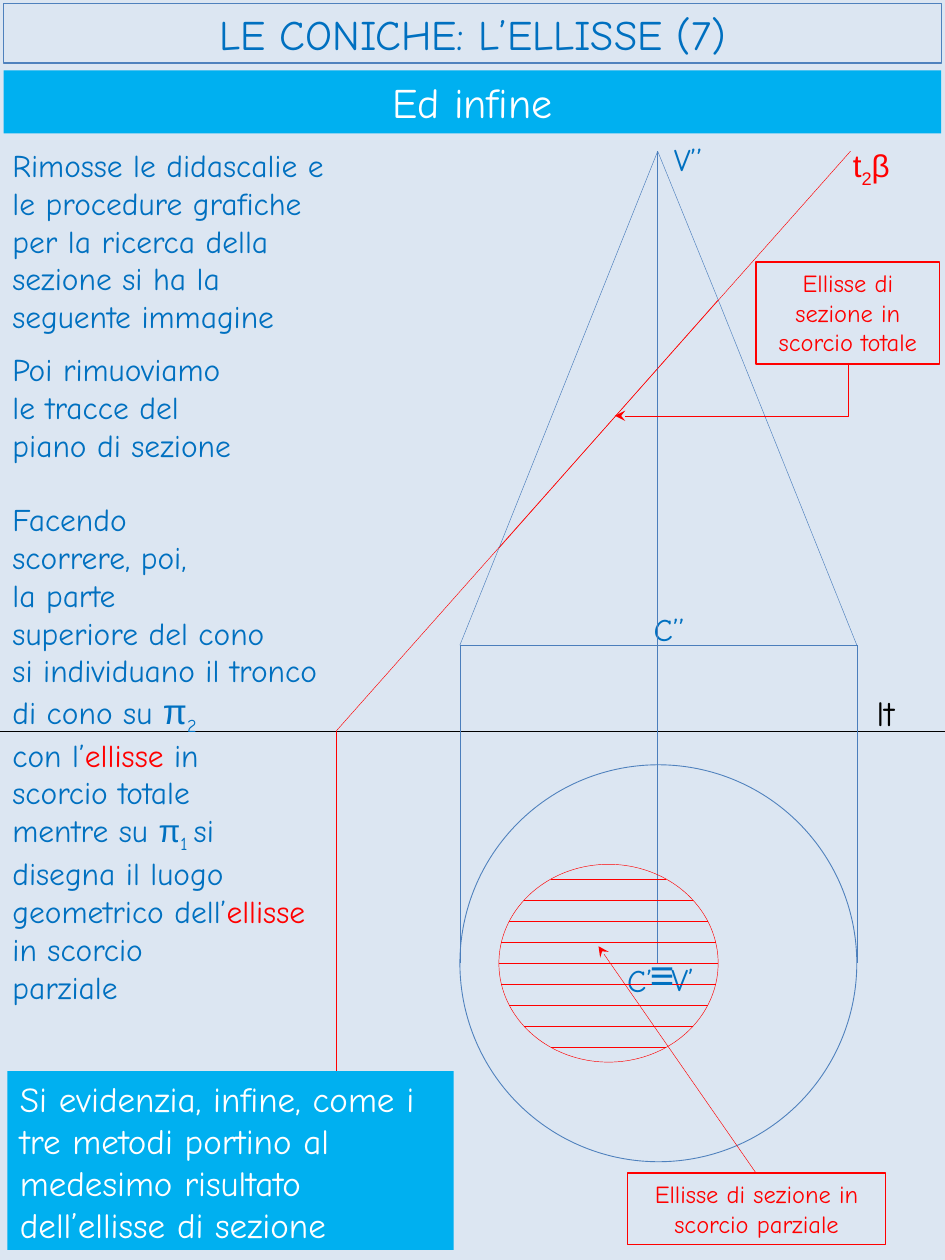
from math import sqrt

from lxml.etree import SubElement
from pptx import Presentation
from pptx.dml.color import RGBColor
from pptx.enum.shapes import MSO_CONNECTOR, MSO_SHAPE
from pptx.enum.text import MSO_ANCHOR, MSO_AUTO_SIZE, PP_ALIGN
from pptx.oxml.ns import qn
from pptx.util import Inches, Pt

PALE = RGBColor(0xDC, 0xE6, 0xF2)
CYAN = RGBColor(0x00, 0xB0, 0xF0)
TEXT_BLUE = RGBColor(0x00, 0x70, 0xC0)
OUTLINE = RGBColor(0x4F, 0x81, 0xBD)
CONE = RGBColor(0x4B, 0x7E, 0xBC)
RED = RGBColor(0xFF, 0x00, 0x00)
BLACK = RGBColor(0x00, 0x00, 0x00)
WHITE = RGBColor(0xFF, 0xFF, 0xFF)


class Drawing:
    font = "Comic Neue"
    size = 18
    hairline = 0.25

    def __init__(self, slide):
        self.s = slide

    def fill_text(self, sp, paragraphs, align=PP_ALIGN.LEFT, anchor=MSO_ANCHOR.TOP, **style):
        """Each paragraph is a string or a list of strings and (string, overrides) pairs."""
        tf = sp.text_frame
        frame = {"word_wrap": True, "auto_size": MSO_AUTO_SIZE.NONE, "vertical_anchor": anchor}
        for name, value in frame.items():
            setattr(tf, name, value)
        base = {"name": self.font, "size": self.size, "color": TEXT_BLUE} | style
        for i, runs in enumerate(paragraphs):
            p = tf.paragraphs[0] if i == 0 else tf.add_paragraph()
            p.alignment = align
            for item in [runs] if isinstance(runs, str) else runs:
                text, changes = (item, {}) if isinstance(item, str) else item
                look = base | changes
                r = p.add_run()
                r.text = text
                r.font.color.rgb = look["color"]
                for name, value in {"name": look["name"], "size": Pt(look["size"])}.items():
                    setattr(r.font, name, value)
                if look.get("sub"):
                    r._r.get_or_add_rPr().set("baseline", "-25000")

    def title(self, text, at):
        sp = self.s.shapes.title
        for name, value in zip(("left", "top", "width", "height"), at):
            setattr(sp, name, Inches(value))
        sp.line.color.rgb = OUTLINE
        sp.line.width = Pt(0.75)
        self.fill_text(sp, [text], PP_ALIGN.CENTER, MSO_ANCHOR.MIDDLE, size=24)

    def shape(self, kind, at, fill=None, alpha=None, line=None, width=0.75):
        sp = self.s.shapes.add_shape(kind, *map(Inches, at))
        sp.shadow.inherit = False
        if fill is None:
            sp.fill.background()
        else:
            sp.fill.solid()
            sp.fill.fore_color.rgb = fill
            if alpha:
                color = sp._element.spPr.find(".//" + qn("a:srgbClr"))
                SubElement(color, qn("a:alpha")).set("val", str(alpha * 1000))
        if line is None:
            sp.line.fill.background()
        else:
            sp.line.color.rgb = line
            sp.line.width = Pt(width)
        return sp

    def box(self, paragraphs, at, fill=None, alpha=None, line=None, **style):
        sp = self.shape(MSO_SHAPE.RECTANGLE, at, fill, alpha, line)
        self.fill_text(sp, paragraphs, **style)

    def text(self, paragraphs, at, **style):
        self.fill_text(self.s.shapes.add_textbox(*map(Inches, at)), paragraphs, **style)

    def line(self, start, end, color, arrow=False, kind=MSO_CONNECTOR.STRAIGHT):
        c = self.s.shapes.add_connector(kind, *map(Inches, (*start, *end)))
        c.line.color.rgb = color
        c.line.width = Pt(self.hairline)
        if arrow:
            SubElement(c.line._get_or_add_ln(), qn("a:tailEnd")).set("type", "stealth")
        SubElement(c._element.spPr, qn("a:effectLst"))
        return c

    def corner_arrow(self, start, end):
        """Arrow that goes down from start, then left to end: a one-bend elbow turned by 90°."""
        (x1, y1), (x2, y2) = start, end
        cx, cy, w, h = (x1 + x2) / 2, (y1 + y2) / 2, y2 - y1, x1 - x2
        c = self.line((cx - w / 2, cy - h / 2), (cx + w / 2, cy + h / 2), RED, True,
                      MSO_CONNECTOR.ELBOW)
        spPr = c._element.spPr
        spPr.find(qn("a:xfrm")).set("rot", "5400000")
        spPr.find(qn("a:prstGeom")).set("prst", "bentConnector2")


def main():
    prs = Presentation()
    prs.slide_width, prs.slide_height = Inches(7.5), Inches(10)
    s = prs.slides.add_slide(prs.slide_layouts[5])
    s.background.fill.solid()
    s.background.fill.fore_color.rgb = PALE
    d = Drawing(s)

    d.title("LE CONICHE: L’ELLISSE (7)", (0.03, 0.03, 7.44, 0.47))

    # Ground line, base circle and truncated cone
    left, axis, right, base, centre = 3.65, 5.22, 6.8, 5.12, 7.64
    cut_left, cut_right = (3.96, 4.35), (5.7, 2.38)
    d.line((0, 5.8), (7.5, 5.8), BLACK)
    d.shape(MSO_SHAPE.OVAL, (left, 6.07, 3.15, 3.15), line=OUTLINE, width=0.5)
    for x in (left, right, axis):
        d.line((x, centre), (x, base), CONE)
    d.line((left, base), (right, base), CONE)
    d.line(cut_left, (left, base), CONE)
    d.line(cut_right, (right, base), CONE)
    d.box(["C’’"], (5.09, 4.79, 0.47, 0.31), PALE, 50)
    d.box(["C’"], (4.88, 7.58, 0.43, 0.31), PALE, 50)
    d.text(["lt"], (6.86, 5.44, 0.47, 0.44), size=20, color=BLACK)

    # Traces of the section plane
    d.line((2.67, 5.8), (6.75, 1.2), RED)
    d.line((2.67, 5.8), (2.67, 9.15), RED)
    d.text([["t", ("2", {"sub": True}), "β"]], (6.67, 1.11, 0.55, 0.4), name="Arial", color=RED)

    # Upper part of the cone
    apex = (axis, 1.2)
    d.line(apex, (axis, 7.65), CONE)
    d.box(["V’’"], (5.25, 1.06, 0.47, 0.4), PALE, 50)
    d.line(apex, cut_left, CONE)
    d.line(apex, cut_right, CONE)
    d.line(cut_left, cut_right, RED)
    d.text(["V’"], (5.23, 7.57, 0.51, 0.4))

    # Section ellipse with evenly spaced hatching
    x0, y0, w, h = 3.96, 6.86, 1.74, 1.57
    d.shape(MSO_SHAPE.OVAL, (x0, y0, w, h), line=RED, width=d.hairline)
    cx, cy = x0 + w / 2, y0 + h / 2
    for i in range(-4, 5):
        dy = i / 6
        half = w / 2 * sqrt(1 - (2 * dy / h) ** 2)
        d.line((cx - half, cy + dy), (cx + half, cy + dy), RED)

    # Callouts
    for text, at in (("Ellisse di sezione in scorcio totale", (6, 2.08, 1.46, 0.81)),
                     ("Ellisse di sezione in scorcio parziale", (4.98, 9.31, 2.05, 0.57))):
        d.box([text], at, line=RED, align=PP_ALIGN.CENTER, size=14, color=RED)
    d.corner_arrow((6.73, 2.88), (4.88, 3.3))
    d.line((6, 9.31), (4.75, 7.51), RED, arrow=True)

    # Bands and explanation
    d.box(["Ed infine"], (0.03, 0.56, 7.44, 0.5), CYAN,
          align=PP_ALIGN.CENTER, size=24, color=WHITE)
    d.box(["Si evidenzia, infine, come i tre metodi portino al medesimo risultato "
           "dell’ellisse di sezione"], (0.06, 8.5, 3.54, 1.42), CYAN, size=20, color=WHITE)
    d.text(["Rimosse le didascalie e", "le procedure grafiche", "per la ricerca della",
            "sezione si ha la", "seguente immagine"], (0, 1.11, 3.54, 1.62))
    d.text(["Poi rimuoviamo", "le tracce del", "piano di sezione"], (0, 2.73, 2.49, 1.31))
    pi = ("π", {"name": "Arial", "size": 20})
    ellipse = ("ellisse", {"color": RED})
    d.text(["Facendo", "scorrere, poi,", "la parte", "superiore del cono",
            ["si individuano il tronco di cono su ", pi, ("2", {"sub": True})],
            ["con l’", ellipse, " in"],
            "scorcio totale",
            ["mentre su ", ("π", {"name": "Arial"}), ("1 ", {"sub": True}),
             "si disegna il luogo geometrico dell’", ellipse],
            "in scorcio", "parziale"], (0, 3.92, 2.62, 4.38))
    d.text(["≡"], (5.06, 7.48, 0.43, 0.52), name="Arial", size=24)

    prs.save("out.pptx")


if __name__ == "__main__":
    main()
